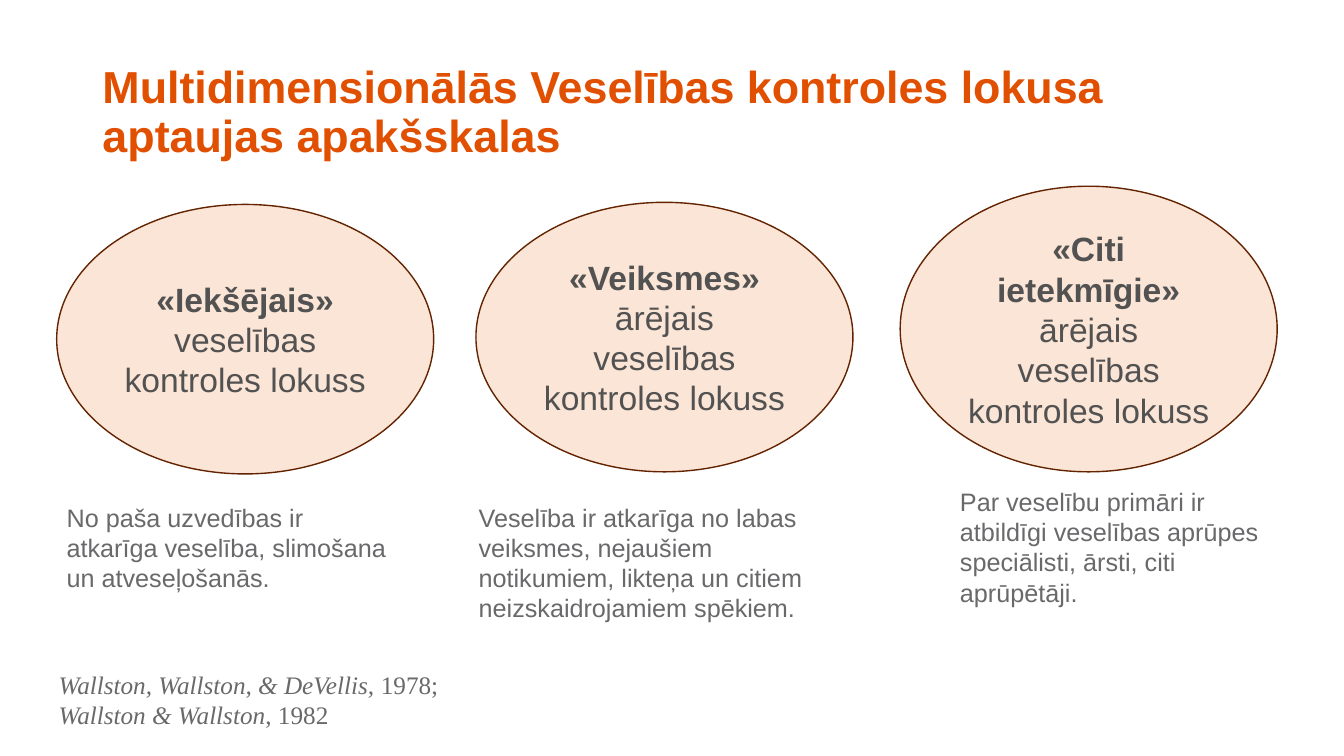
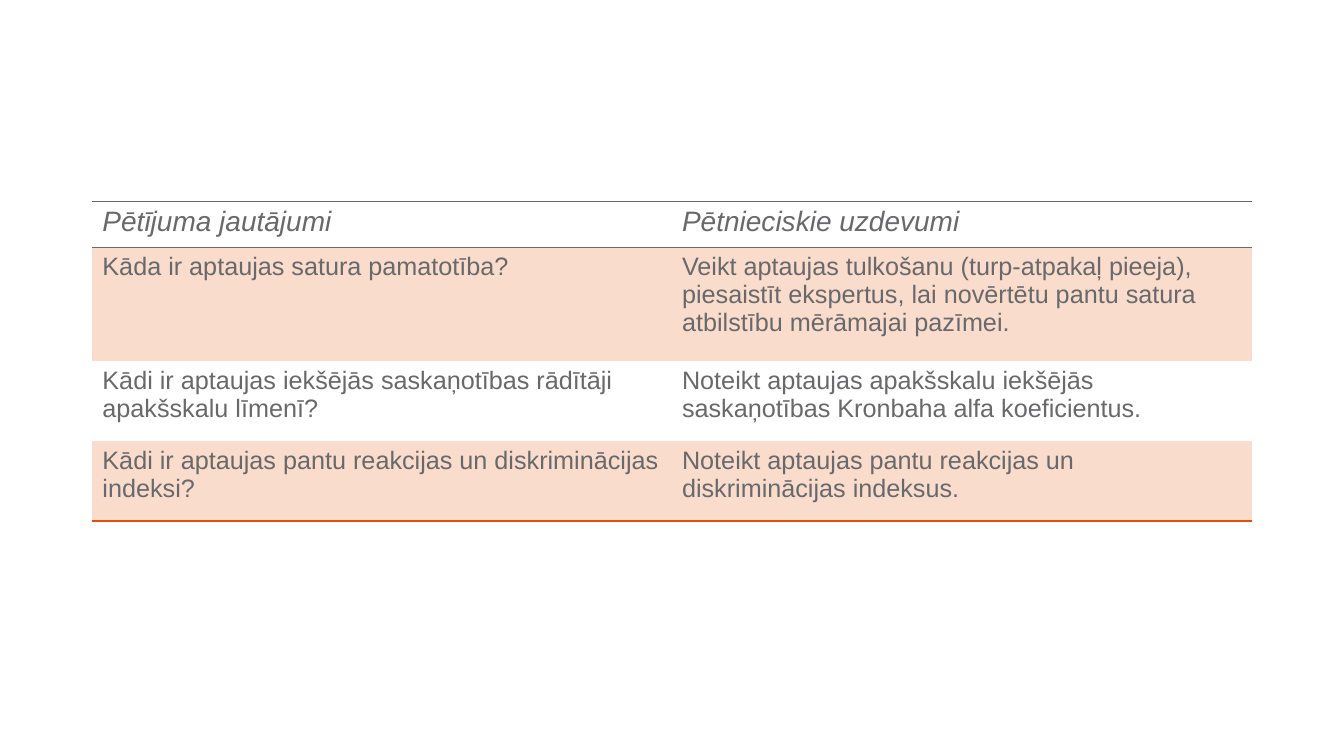
import dataclasses
import typing

import lxml.etree
import pptx
import pptx.dml.color
import pptx.enum.shapes
import pptx.enum.text
import pptx.oxml.ns
import pptx.util

Pt = pptx.util.Pt
qn = pptx.oxml.ns.qn
MIDDLE = pptx.enum.text.MSO_ANCHOR.MIDDLE
ALIGN = pptx.enum.text.PP_ALIGN

ORANGE = "E14F01"
PEACH = "FBE5D6"
BAND = "F9DCCC"
BROWN = "632300"
DARK = "525252"
GREY = "69696B"
NO_STYLE = "{2D5ABB26-0587-4C30-8999-92F81FD0307C}"

TITLE = {"name": "Arial", "size": Pt(32), "bold": True, "color": ORANGE}
SCALE = {"name": "Arial", "size": Pt(24), "color": DARK}
BODY = {"name": "Arial", "size": Pt(18), "color": GREY}
HEAD = BODY | {"size": Pt(20), "italic": True}
SOURCE = BODY | {"name": "Times New Roman"}


class Box(typing.NamedTuple):
    left: float
    top: float
    width: float
    height: float


class Run(typing.NamedTuple):
    text: str
    fmt: dict


@dataclasses.dataclass
class Scale:
    name: str
    kind: str
    oval: Box
    note: str
    note_box: Box


SCALES = [
    Scale("«Iekšējais» ", "veselības kontroles lokuss",
          Box(40.5, 146, 269.3, 192.5),
          "No paša uzvedības ir atkarīga veselība, slimošana un atveseļošanās.",
          Box(40.5, 355, 250.5, 72.7)),
    Scale("«Veiksmes» ", "ārējais veselības kontroles lokuss",
          Box(340, 144.5, 269.3, 192.5),
          "Veselība ir atkarīga no labas veiksmes, nejaušiem notikumiem, "
          "likteņa un citiem neizskaidrojamiem spēkiem.",
          Box(334.8, 355, 250.5, 94.5)),
    Scale("«Citi ietekmīgie» ", "ārējais veselības kontroles lokuss",
          Box(643, 133, 269.3, 204),
          "Par veselību primāri ir atbildīgi veselības aprūpes speciālisti, "
          "ārsti, citi aprūpētāji.",
          Box(678.6, 343.7, 250.5, 94.5)),
]

CITATION = [
    Run("Wallston, Wallston, & DeVellis,", {"italic": True}),
    Run(" 1978; ", {}),
    Run("Wallston & Wallston", {"italic": True}),
    Run(", 1982", {}),
]

ROWS = [
    ("Pētījuma jautājumi", "Pētnieciskie uzdevumi"),
    ("Kāda ir aptaujas satura pamatotība?",
     "Veikt aptaujas tulkošanu (turp-atpakaļ pieeja), piesaistīt ekspertus, "
     "lai novērtētu pantu satura atbilstību mērāmajai pazīmei."),
    ("Kādi ir aptaujas iekšējās saskaņotības rādītāji apakšskalu līmenī?",
     "Noteikt aptaujas apakšskalu iekšējās saskaņotības Kronbaha alfa koeficientus."),
    ("Kādi ir aptaujas pantu reakcijas un diskriminācijas indeksi?",
     "Noteikt aptaujas pantu reakcijas un diskriminācijas indeksus."),
]
ROW_HEIGHTS = [33.1, 81.4, 57, 57]


def rgb(color: str) -> pptx.dml.color.RGBColor:
    """Turn a hex string into a colour."""
    return pptx.dml.color.RGBColor.from_string(color)


def lengths(box: Box) -> list:
    """Give the sides of a box as lengths in points."""
    return [Pt(v) for v in box]


def write(tf: typing.Any, runs: list[Run], base: dict, align: typing.Any = ALIGN.LEFT) -> None:
    """Fill the first paragraph of a text frame with formatted runs."""
    p = tf.paragraphs[0]
    p.alignment = align
    for run in runs:
        r = p.add_run()
        r.text = run.text
        for key, value in (base | run.fmt).items():
            if key == "color":
                r.font.color.rgb = rgb(value)
            else:
                setattr(r.font, key, value)


def add_title(s: typing.Any, text: str, box: Box) -> None:
    """Place and format the title placeholder."""
    sp = s.shapes.title
    for key, value in zip(box._fields, lengths(box)):
        setattr(sp, key, value)
    tf = sp.text_frame
    frame = {"word_wrap": True, "vertical_anchor": MIDDLE,
             "auto_size": pptx.enum.text.MSO_AUTO_SIZE.NONE}
    for key, value in frame.items():
        setattr(tf, key, value)
    write(tf, [Run(text, {})], TITLE)
    tf.paragraphs[0].line_spacing = 0.9


def add_text(s: typing.Any, box: Box, runs: list[Run], base: dict) -> None:
    """Add a wrapping text box."""
    tf = s.shapes.add_textbox(*lengths(box)).text_frame
    tf.word_wrap = True
    write(tf, runs, base)


def add_scale(s: typing.Any, scale: Scale) -> None:
    """Add an oval naming a subscale and the note below it."""
    sp = s.shapes.add_shape(pptx.enum.shapes.MSO_SHAPE.OVAL, *lengths(scale.oval))
    sp.shadow.inherit = False
    sp.fill.solid()
    sp.fill.fore_color.rgb = rgb(PEACH)
    sp.line.color.rgb = rgb(BROWN)
    sp.line.width = Pt(1)
    sp.text_frame.word_wrap = True
    sp.text_frame.vertical_anchor = MIDDLE
    runs = [Run(scale.name, {"bold": True}), Run(scale.kind, {})]
    write(sp.text_frame, runs, SCALE, ALIGN.CENTER)
    add_text(s, scale.note_box, [Run(scale.note, {})], BODY)


def add_border(cell: typing.Any, side: str, color: str) -> None:
    """Draw a one-point line on one side of a cell."""
    tc_pr = cell._tc.get_or_add_tcPr()
    ln = lxml.etree.SubElement(tc_pr, qn(f"a:ln{side}"), w=str(Pt(1)))
    fill = lxml.etree.SubElement(ln, qn("a:solidFill"))
    lxml.etree.SubElement(fill, qn("a:srgbClr"), val=color)


def add_questions(s: typing.Any, box: Box) -> None:
    """Add the table of research questions and tasks."""
    table = s.shapes.add_table(len(ROWS), len(ROWS[0]), *lengths(box)).table
    table._tbl.tblPr.find(qn("a:tableStyleId")).text = NO_STYLE
    table.first_row = table.horz_banding = False
    borders = {0: [("T", GREY), ("B", GREY)], len(ROWS) - 1: [("B", ORANGE)]}
    for i, (texts, height) in enumerate(zip(ROWS, ROW_HEIGHTS)):
        table.rows[i].height = Pt(height)
        for j, text in enumerate(texts):
            cell = table.cell(i, j)
            for side, color in borders.get(i, []):
                add_border(cell, side, color)
            if i % 2:
                cell.fill.solid()
                cell.fill.fore_color.rgb = rgb(BAND)
            else:
                cell.fill.background()
            write(cell.text_frame, [Run(text, {})], BODY if i else HEAD)


def main() -> None:
    """Build and save the presentation."""
    prs = pptx.Presentation()
    prs.slide_width, prs.slide_height = Pt(960), Pt(540)

    s = prs.slides.add_slide(prs.slide_layouts.get_by_name("Title Only"))
    add_title(s, "Multidimensionālās Veselības kontroles lokusa aptaujas apakšskalas",
              Box(66, 28.75, 828, 104.4))
    for scale in SCALES:
        add_scale(s, scale)
    add_text(s, Box(34.8, 474.5, 318, 50.9), CITATION, SOURCE)

    s = prs.slides.add_slide(prs.slide_layouts.get_by_name("Blank"))
    add_questions(s, Box(66, 143.75, 828, sum(ROW_HEIGHTS)))

    prs.save("out.pptx")


if __name__ == "__main__":
    main()
